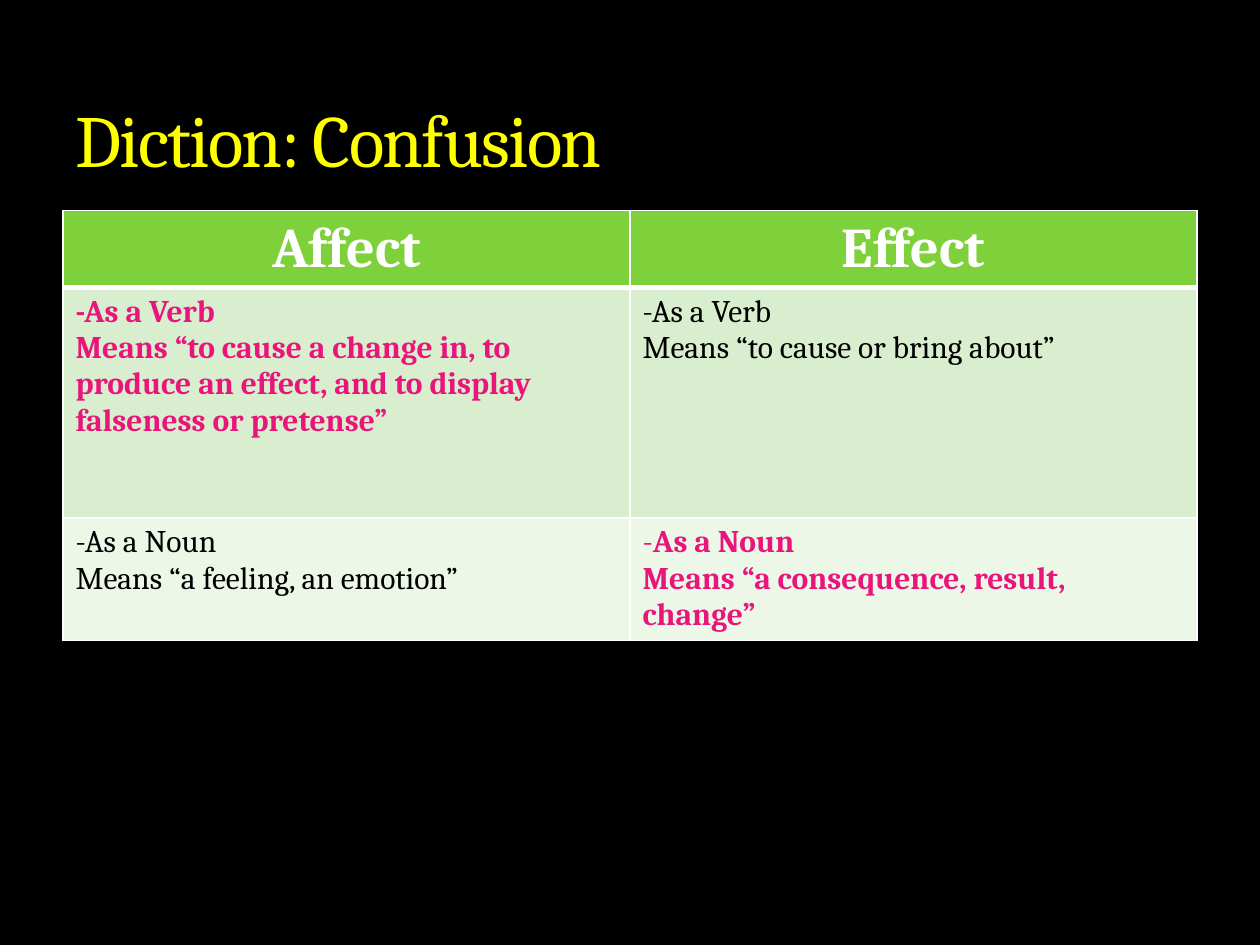
from lxml.etree import SubElement as Sub
from pptx import Presentation
from pptx.dml.color import RGBColor
from pptx.enum.text import MSO_ANCHOR as Anchor, PP_ALIGN as Align
from pptx.oxml.ns import qn
from pptx.util import Inches, Pt

FONT = "Cambria"
PINK, BLACK, WHITE = "EA157A", "000000", "FFFFFF"
HEADS = ["Affect", "Effect"]
BODY = [
    [
        ("-As a Verb", "Means “to cause a change in, to produce an effect, and to display falseness or pretense”"),
        ("-As a Verb", "Means “to cause or bring about”"),
    ],
    [
        ("-As a Noun", "Means “a feeling, an emotion”"),
        ("-As a Noun", "Means “a consequence, result, change”"),
    ],
]
FILLS = ["D8EECE", "ECF7E8"]
ROWS = [0.61, 1.83, 0.97]


def color(code):
    return RGBColor.from_string(code)


def style(run, size, code, bold=False):
    font = run.font
    font.name = FONT
    font.size = Pt(size)
    font.bold = bold
    font.color.rgb = color(code)


def add_title(slide, text):
    title = slide.shapes.title
    title.left, title.top = Inches(0.5), Inches(0.17)
    title.width, title.height = Inches(9), Inches(1.33)
    frame = title.text_frame
    frame.text = text
    frame.word_wrap = True
    frame.vertical_anchor = Anchor.BOTTOM
    para = frame.paragraphs[0]
    para.alignment = Align.LEFT
    run = para.runs[0]
    style(run, 42, "FFFF00")
    run.font._element.set("spc", "-100")


def add_edge(cell, side, width):
    props = cell._tc.get_or_add_tcPr()
    line = Sub(props, qn(f"a:ln{side}"), w=str(Pt(width)))
    fill = Sub(line, qn("a:solidFill"))
    Sub(fill, qn("a:srgbClr"), val=WHITE)


def paint(cell, code, top=1, base=1):
    for side, width in zip("LRTB", (1, 1, top, base)):
        add_edge(cell, side, width)
    cell.fill.solid()
    cell.fill.fore_color.rgb = color(code)


def fill_head(cell, text):
    paint(cell, "7FD13B", base=3)
    para = cell.text_frame.paragraphs[0]
    para.text = text
    para.alignment = Align.CENTER
    style(para.runs[0], 32, WHITE, True)


def fill_body(cell, lines, code, first, strong):
    paint(cell, code, top=3 if first else 1)
    cell.text_frame.text = "\n".join(lines)
    for para in cell.text_frame.paragraphs:
        for run in para.runs:
            style(run, 18, PINK if strong else BLACK, strong)


def split_dash(cell):
    para = cell.text_frame.paragraphs[0]
    dash = para.runs[0]
    rest = para.add_run()
    rest.text = dash.text[1:]
    dash.text = "-"
    style(dash, 18, PINK)
    style(rest, 18, PINK, True)


def add_grid(slide):
    frame = slide.shapes.add_table(
        len(ROWS), len(HEADS), Inches(0.5), Inches(1.67), Inches(9), Inches(sum(ROWS))
    )
    table = frame.table
    for row, height in zip(table.rows, ROWS):
        row.height = Inches(height)
    for col, text in enumerate(HEADS):
        fill_head(table.cell(0, col), text)
    for row, (cells, code) in enumerate(zip(BODY, FILLS)):
        for col, lines in enumerate(cells):
            fill_body(table.cell(row + 1, col), lines, code, row == 0, row == col)
    split_dash(table.cell(2, 1))


def main():
    deck = Presentation()
    deck.slide_width, deck.slide_height = Inches(10), Inches(7.5)
    slide = deck.slides.add_slide(deck.slide_layouts[5])
    back = slide.background.fill
    back.solid()
    back.fore_color.rgb = color(BLACK)
    add_title(slide, "Diction: Confusion")
    add_grid(slide)
    deck.save("out.pptx")


if __name__ == "__main__":
    main()
